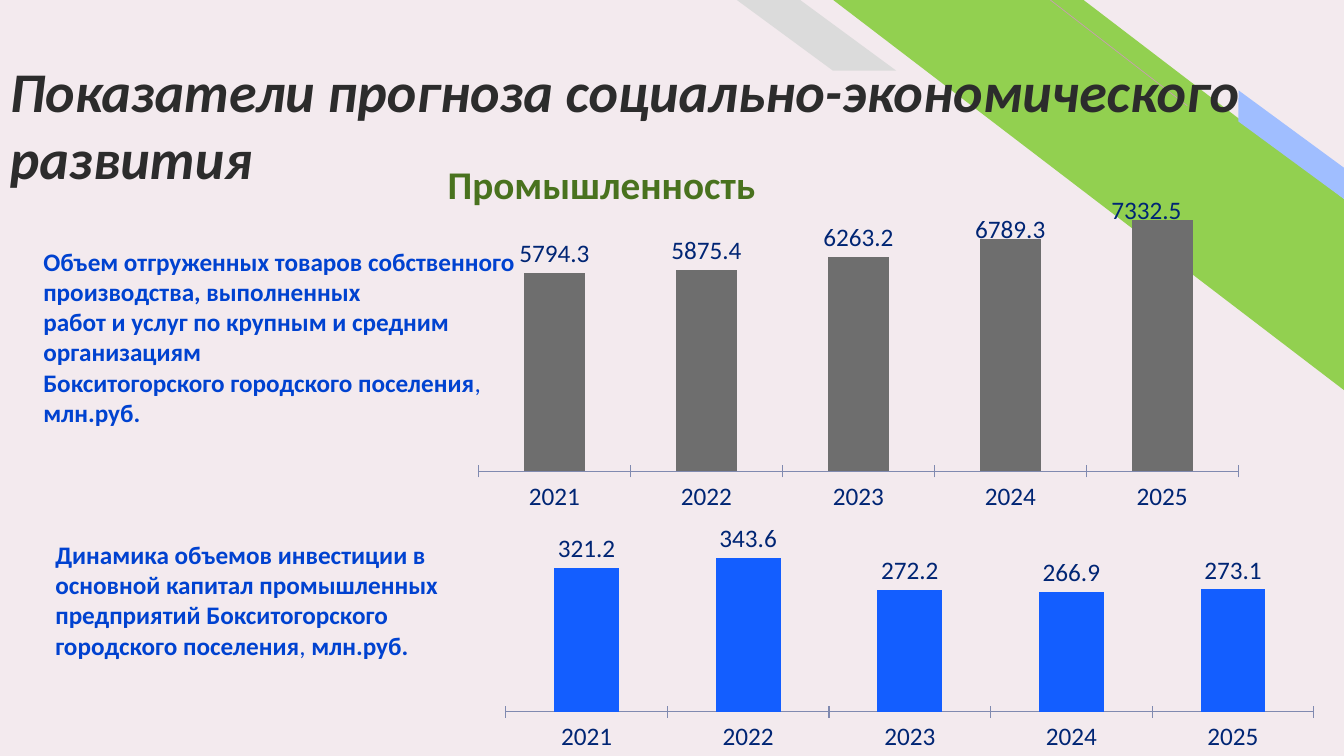
"""Build the slide on industry forecast figures with two column charts."""
from lxml.etree import SubElement
from pptx import Presentation
from pptx.chart.data import CategoryChartData
from pptx.dml.color import RGBColor
from pptx.enum.chart import XL_CHART_TYPE, XL_LABEL_POSITION, XL_TICK_MARK
from pptx.enum.shapes import MSO_CONNECTOR, MSO_SHAPE
from pptx.enum.text import MSO_ANCHOR, PP_ALIGN
from pptx.oxml import parse_xml
from pptx.oxml.ns import nsdecls, qn
from pptx.util import Inches, Pt

deck = Presentation()
deck.slide_width, deck.slide_height = Inches(13.33), Inches(7.5)
slide = deck.slides.add_slide(deck.slide_layouts[6])
shapes = slide.shapes


def tint(code):
    return RGBColor.from_string(code)


def place(*shares):
    sides = (deck.slide_width, deck.slide_height) * 2
    return [int(side * share / 100) for side, share in zip(sides, shares)]


slide.background.fill.solid()
slide.background.fill.fore_color.rgb = tint("F3EAEE")

bands = [
    (MSO_SHAPE.DIAGONAL_STRIPE, (62, 0, 38, 51.6), 0.51, 0, "92D050"),
    (MSO_SHAPE.PARALLELOGRAM, (90.53, 17.47, 11.1, 3.33), 0.72, 36.3, "A0BEFF"),
    (MSO_SHAPE.PARALLELOGRAM, (54.83, 0, 11.85, 9.33), 1.36, 0, "DBDBDB"),
]
for kind, area, slant, turn, color in bands:
    band = shapes.add_shape(kind, *place(*area))
    band.shadow.inherit = False
    band.adjustments[0] = slant
    band.rotation = turn
    band.fill.solid()
    band.fill.fore_color.rgb = tint(color)
    band.line.fill.background()
    band._element.spPr.find(qn("a:xfrm")).set("flipH", "1")

edge = shapes.add_connector(MSO_CONNECTOR.STRAIGHT, *place(88.35, 14, 78.15, 0))
edge.line.color.rgb = tint("C89EB1")
edge.line.width = Pt(0.5)
SubElement(edge._element.spPr, qn("a:effectLst"))

years = ["2021", "2022", "2023", "2024", "2025"]
charts = [
    ((34.43, 25.2, 58.88, 43.2), [5794.3, 5875.4, 6263.2, 6789.3, 7332.5],
     "6E6E6E", 8000, (0.02, 0.84), {3: (0, 0.03), 4: (-0.02, 0.03)}),
    ((36.38, 69.2, 62.63, 30.8), [321.2, 343.6, 272.2, 266.9, 273.1],
     "135EFF", 400, (0.04, 0.77), {}),
]
for area, values, color, limit, (top, height), shifts in charts:
    data = CategoryChartData()
    data.categories = years
    data.add_series("Series 1", values)
    chart = shapes.add_chart(XL_CHART_TYPE.COLUMN_CLUSTERED, *place(*area), data).chart
    chart.has_legend = chart.has_title = False
    chart.font.size, chart.font.name = Pt(18), "Calibri"
    chart.font.color.rgb = tint("002574")

    scale = chart.value_axis
    form = {"visible": False, "has_major_gridlines": False,
            "minimum_scale": 0, "maximum_scale": limit}
    for name, value in form.items():
        setattr(scale, name, value)
    axis = chart.category_axis
    axis.major_tick_mark = XL_TICK_MARK.CROSS
    axis.format.line.color.rgb = tint("808AB0")
    axis.format.line.width = Pt(0.75)

    plot = chart.plots[0]
    plot.gap_width, plot.vary_by_categories = 150, False
    series = plot.series[0]
    series.format.fill.solid()
    series.format.fill.fore_color.rgb = tint(color)
    labels = series.data_labels
    labels.show_value = True
    labels.position = XL_LABEL_POSITION.OUTSIDE_END

    for index, (right, down) in shifts.items():
        series.points[index].data_label.position = XL_LABEL_POSITION.OUTSIDE_END
        label = labels._element.findall(qn("c:dLbl"))[-1]
        label.insert(1, parse_xml(
            f'<c:layout {nsdecls("c")}><c:manualLayout><c:x val="{right}"/>'
            f'<c:y val="{down}"/></c:manualLayout></c:layout>'))

    area = chart._chartSpace.chart.plotArea
    for old in area.findall(qn("c:layout")):
        area.remove(old)
    area.insert(0, parse_xml(
        f'<c:layout {nsdecls("c")}><c:manualLayout><c:layoutTarget val="inner"/>'
        f'<c:xMode val="edge"/><c:yMode val="edge"/><c:x val="0.02"/><c:y val="{top}"/>'
        f'<c:w val="0.96"/><c:h val="{height}"/></c:manualLayout></c:layout>'))

note = {"size": Pt(18), "bold": True}
plain = {"size": Pt(18), "bold": False}
head = {"size": Pt(28), "bold": True}
title = {"size": Pt(40), "bold": True, "italic": True}
low = {"vertical_anchor": MSO_ANCHOR.BOTTOM, "margin_bottom": 0}
mid = {"alignment": PP_ALIGN.CENTER, "line_spacing": 0.9}
texts = [
    ((2.48, 31.87, 40.2, 25.6), "0042D0", {}, {}, [
        ("Объем отгруженных товаров собственного производства, выполненных\n"
         "работ и услуг по крупным и средним организациям\n"
         "Бокситогорского городского поселения", note),
        (", ", plain), ("млн.руб.", note)]),
    ((3.38, 70.67, 34.58, 17.47), "0042D0", {}, {}, [
        ("Динамика объемов инвестиции в основной капитал промышленных "
         "предприятий Бокситогорского городского поселения", note),
        (", ", plain), ("млн.руб.", note)]),
    ((21.38, 18.67, 46.73, 8.8), "49721E", low, mid, [("Промышленность", head)]),
    ((0, 6.8, 100, 19.33), "2C2C2C", {}, {}, [
        ("Показатели прогноза социально-экономического развития", title)]),
]
for area, color, frame, para, runs in texts:
    body = shapes.add_textbox(*place(*area)).text_frame
    body.word_wrap = True
    line = body.paragraphs[0]
    for target, form in ((body, frame), (line, para)):
        for name, value in form.items():
            setattr(target, name, value)
    for words, form in runs:
        for count, part in enumerate(words.split("\n")):
            if count:
                line.add_line_break()
            run = line.add_run()
            run.text = part
            run.font.color.rgb = tint(color)
            for name, value in {"name": "Calibri", **form}.items():
                setattr(run.font, name, value)

deck.save("out.pptx")
